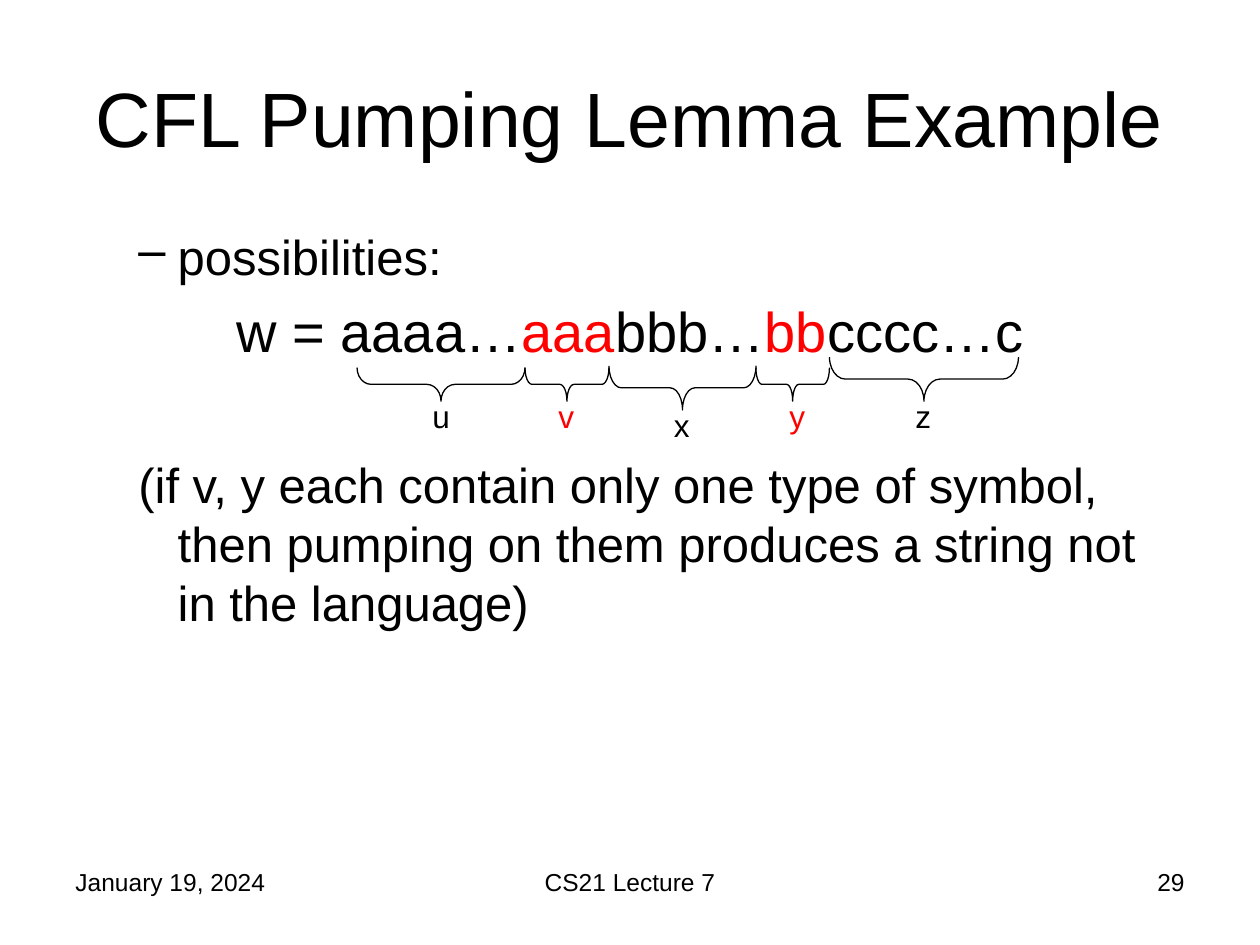
from pptx import Presentation
from pptx.dml.color import RGBColor
from pptx.enum.shapes import MSO_SHAPE
from pptx.enum.text import MSO_ANCHOR, PP_ALIGN
from pptx.util import Pt

LEFT, MID, RIGHT = PP_ALIGN.LEFT, PP_ALIGN.CENTER, PP_ALIGN.RIGHT
TOP, CENTER = MSO_ANCHOR.TOP, MSO_ANCHOR.MIDDLE
BRACE = MSO_SHAPE.LEFT_BRACE
BLACK, RED = "000000", "FF0000"


def color(code):
    return RGBColor.from_string(code)


def write(frame, runs, size=28, align=LEFT, before=0, margin=0, indent=0, first=True):
    para = frame.paragraphs[0] if first else frame.add_paragraph()
    para.alignment = align
    para.space_before = Pt(before)
    props = para._p.get_or_add_pPr()
    props.set("marL", str(Pt(margin)))
    props.set("indent", str(Pt(indent)))
    for text, code in runs:
        run = para.add_run()
        run.text = text
        run.font.name = "Arial"
        run.font.size = Pt(size)
        run.font.color.rgb = color(code)
    return props


deck = Presentation()
deck.slide_width, deck.slide_height = Pt(720), Pt(540)
slide = deck.slides.add_slide(deck.slide_layouts[6])


def box(left, top, width, height, anchor=TOP):
    frame = slide.shapes.add_textbox(Pt(left), Pt(top), Pt(width), Pt(height)).text_frame
    frame.word_wrap = True
    frame.vertical_anchor = anchor
    return frame


for text, left, width, align in [
    ("January 19, 2024", 36, 168, LEFT),
    ("CS21 Lecture 7", 246, 228, MID),
    ("29", 516, 168, RIGHT),
]:
    write(box(left, 492, width, 37.5), [(text, BLACK)], size=14, align=align)

title = box(36, 21.6, 648, 90, CENTER)
write(title, [("CFL Pumping Lemma Example", BLACK)], size=44, align=MID)

body = box(36, 126, 648, 356.4)
props = write(body, [("possibilities:", BLACK)], before=5.6, margin=58.5, indent=-22.5)
bullet = props.makeelement(
    "{http://schemas.openxmlformats.org/drawingml/2006/main}buChar", {"char": "–"}
)
props.append(bullet)
word = [("w = aaaa…", BLACK), ("aaa", RED), ("bbb…", BLACK), ("bb", RED), ("cccc…c", BLACK)]
write(body, word, size=32, align=MID, before=6.4, margin=27, indent=-27, first=False)
note = (
    "(if v, y each contain only one type of symbol, "
    "then pumping on them produces a string not in the language)"
)
write(body, [(note, BLACK)], before=52, margin=58.5, indent=-22.5, first=False)

edges = [204, 300, 348, 432, 474, 582]
parts = [
    ("u", BLACK, 240, 19.2, 0, 0.42),
    ("v", RED, 312, 19.2, 0, 0.21),
    ("x", BLACK, 378, 25.2, 5, 0.28),
    ("y", RED, 444, 19.2, 0, 0.18),
    ("z", BLACK, 516, 25.2, 0, 0.36),
]
for start, end, (name, code, left, depth, drop, bend) in zip(edges, edges[1:], parts):
    span = end - start
    tip = 229.2 + drop
    x = (start + end - depth) / 2
    y = tip - (depth + span) / 2
    brace = slide.shapes.add_shape(BRACE, Pt(x), Pt(y), Pt(depth), Pt(span))
    brace.rotation = 270
    brace.adjustments[0] = bend
    brace.shadow.inherit = False
    brace.fill.background()
    brace.line.color.rgb = color(BLACK)
    brace.line.width = Pt(0.75)
    write(box(left, tip - 6, 30, 29), [(name, code)], size=18)

deck.save("out.pptx")
